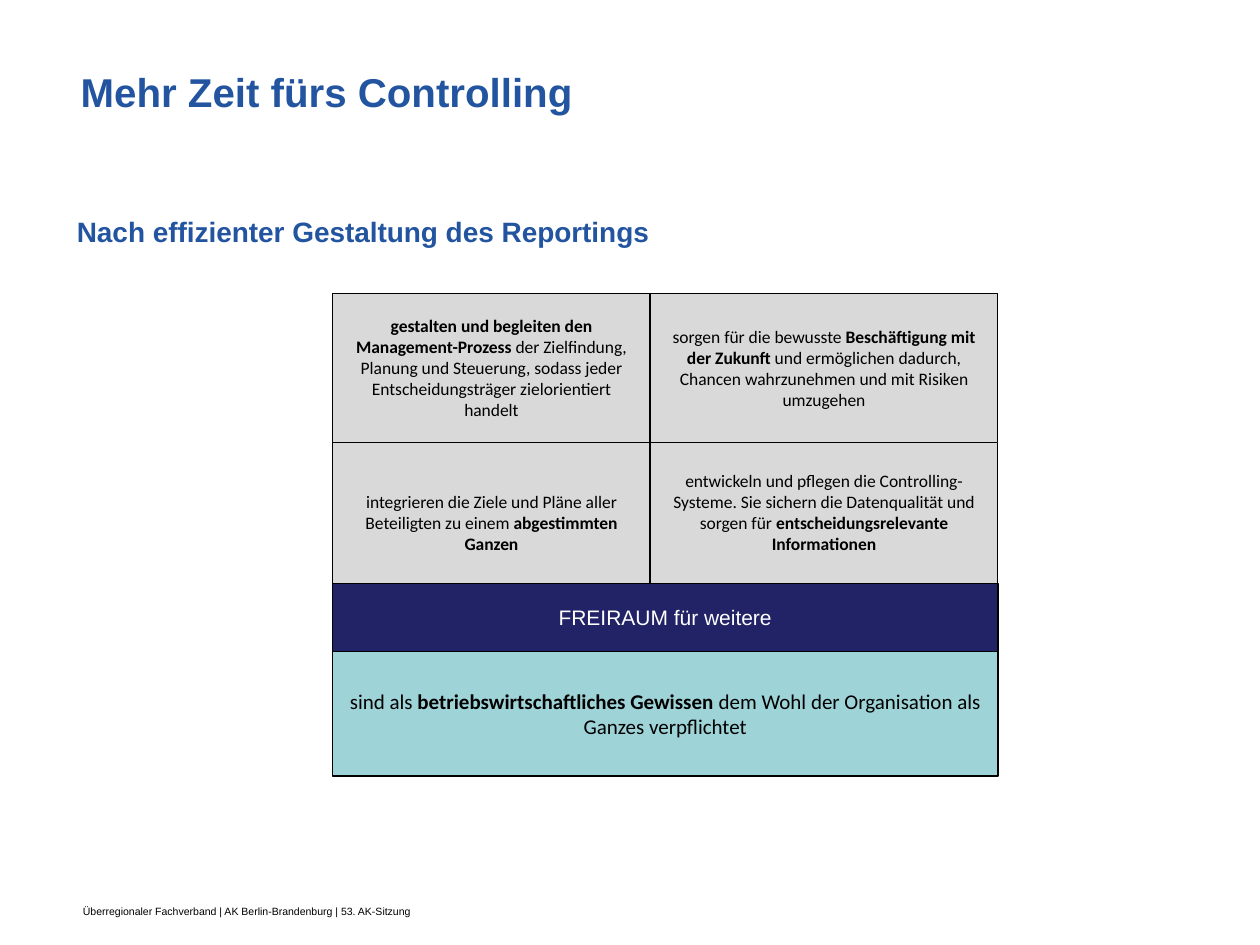
from pptx import Presentation
from pptx.dml.color import RGBColor
from pptx.enum.shapes import MSO_SHAPE
from pptx.enum.text import MSO_ANCHOR, MSO_AUTO_SIZE, PP_ALIGN
from pptx.oxml.xmlchemy import OxmlElement
from pptx.util import Inches, Pt

COLS = [2.64, 5.16, 7.92]
ROWS = [2.33, 3.51, 4.63, 5.17, 6.16]
GREY, TEAL, NAVY, BLUE = "D9D9D9", "9ED3D7", "222267", "2254A0"


def rgb(value):
    return RGBColor.from_string(value)


def set_font(font, size, color, name, bold=None):
    font.size, font.name, font.bold = Pt(size), name, bold
    font.color.rgb = rgb(color)


def fill_placeholder(sp, box, text, size, margin_top):
    sp.left, sp.top, sp.width, sp.height = map(Inches, box)
    tf = sp.text_frame
    tf.text = text
    tf.auto_size = MSO_AUTO_SIZE.NONE
    tf.vertical_anchor = MSO_ANCHOR.TOP
    tf.margin_top = Inches(margin_top)
    p = tf.paragraphs[0]
    p.alignment = PP_ALIGN.LEFT
    p.space_before = Pt(0)
    set_font(p.font, size, BLUE, "Arial", True)
    return p


def remove_bullet(p):
    pPr = p._p.get_or_add_pPr()
    pPr.set("marL", "0")
    pPr.set("indent", "0")
    pPr.insert_element_before(OxmlElement("a:buNone"), "a:tabLst", "a:defRPr")


def add_cell(s, col, row, runs, span=1, fill=GREY, size=10, color="000000",
             name="Calibri", margin_top=None):
    left, top = COLS[col], ROWS[row]
    sp = s.shapes.add_shape(MSO_SHAPE.RECTANGLE, Inches(left), Inches(top),
                            Inches(COLS[col + span] - left), Inches(ROWS[row + 1] - top))
    sp.shadow.inherit = False
    sp.fill.solid()
    sp.fill.fore_color.rgb = rgb(fill)
    sp.line.color.rgb = rgb("000000")
    sp.line.width = Pt(0.75)
    tf = sp.text_frame
    tf.word_wrap = True
    tf.vertical_anchor = MSO_ANCHOR.MIDDLE
    if margin_top is not None:
        tf.vertical_anchor = MSO_ANCHOR.TOP
        tf.margin_top = Inches(margin_top)
    p = tf.paragraphs[0]
    p.alignment = PP_ALIGN.CENTER
    for text, bold in runs:
        r = p.add_run()
        r.text = text
        set_font(r.font, size, color, name, bold)


def add_footer(s, text):
    tf = s.shapes.add_textbox(Inches(0.56), Inches(7.13), Inches(2.94), Inches(0.2)).text_frame
    tf.word_wrap = False
    tf.text = text
    set_font(tf.paragraphs[0].font, 6, "000000", "Arial")


def main():
    prs = Presentation()
    prs.slide_width, prs.slide_height = Inches(10), Inches(7.5)
    s = prs.slides.add_slide(prs.slide_layouts[1])
    title, body = s.placeholders
    fill_placeholder(title, (0.54, 0.44, 7.01, 0.94), "Mehr Zeit fürs Controlling", 23, 0.09)
    p = fill_placeholder(body, (0.51, 1.62, 8.5, 5.28),
                         "Nach effizienter Gestaltung des Reportings", 16, 0.08)
    remove_bullet(p)

    add_cell(s, 0, 0, [
        ("gestalten und begleiten den Management-Prozess ", True),
        ("der Zielfindung, Planung und Steuerung, sodass jeder "
         "Entscheidungsträger zielorientiert handelt", False)])
    add_cell(s, 1, 0, [
        ("sorgen für die bewusste ", False),
        ("Beschäftigung mit der Zukunft ", True),
        ("und ermöglichen dadurch, Chancen wahrzunehmen und mit Risiken umzugehen", False)])
    add_cell(s, 0, 1, [
        ("integrieren die Ziele und Pläne aller Beteiligten zu einem ", False),
        ("abgestimmten Ganzen", True)], margin_top=0.39)
    add_cell(s, 1, 1, [
        ("entwickeln und pflegen die Controlling-Systeme. Sie sichern die "
         "Datenqualität und sorgen für ", False),
        ("entscheidungsrelevante Informationen", True)], margin_top=0.22)
    add_cell(s, 0, 3, [
        ("sind als ", False),
        ("betriebswirtschaftliches Gewissen ", True),
        ("dem Wohl der Organisation als Ganzes verpflichtet", False)],
        span=2, fill=TEAL, size=12)
    add_cell(s, 0, 2, [("FREIRAUM für weitere", False)],
             span=2, fill=NAVY, size=12, color="FFFFFF", name="Arial")
    add_footer(s, "Überregionaler Fachverband | AK Berlin-Brandenburg | 53. AK-Sitzung")
    prs.save("out.pptx")


if __name__ == "__main__":
    main()
